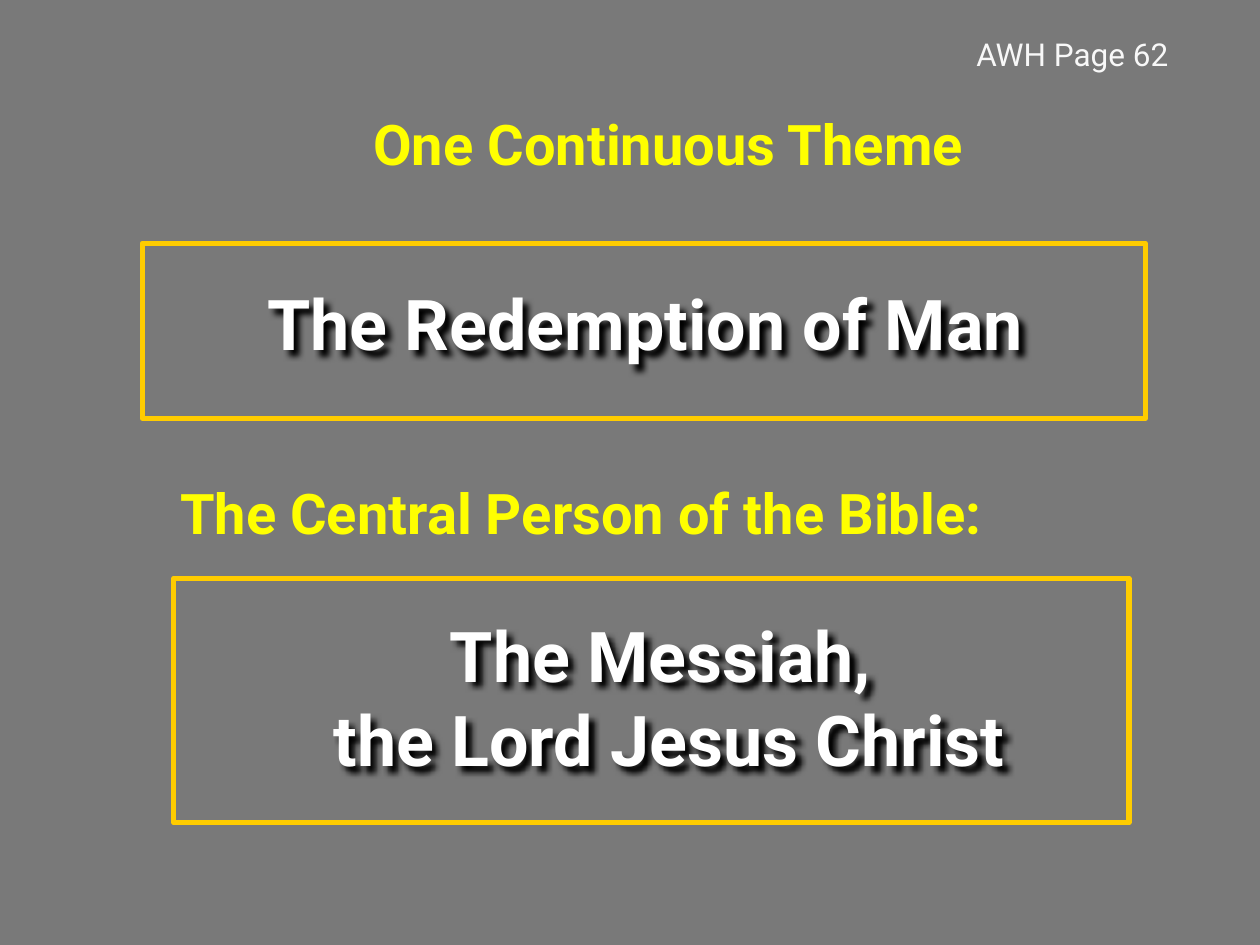
import pptx
import pptx.util
import pptx.dml.color
import pptx.enum.shapes
import pptx.enum.text
import pptx.oxml
import pptx.oxml.ns

Inches, Pt = pptx.util.Inches, pptx.util.Pt
FONT, GREY, GOLD = "Roboto", "797979", "FFCC00"
YELLOW, WHITE, PALE = "FFFF00", "FFFFFF", "F8F8F8"

# text, text place, frame place
FRAMED = [
    ("The Redemption of Man", (1.71, 2.05, 6.82, 0.91), (1.13, 1.93, 7.96, 1.39)),
    ("The Messiah, \vthe Lord Jesus Christ", (1.99, 4.68, 6.64, 1.57),
     (1.38, 4.59, 7.58, 1.94)),
]
# text, place, size, colour, bold, centred, wrapped, margins (side, top)
LABELS = [
    ("One Continuous Theme", (1.3, 0.82, 8.01, 0.64), 32, YELLOW, True, True, True, (0.05, 0.05)),
    ("The Central Person of the Bible:", (1.38, 3.75, 7.2, 0.64), 32, YELLOW, True, False, False,
     (0.05, 0.05)),
    ("AWH Page 62", (7.65, 0.23, 1.96, 0.4), 18, PALE, False, False, True, (0.1, 0.05)),
]
SHADOW = (
    '<a:effectLst xmlns:a="http://schemas.openxmlformats.org/drawingml/2006/main">'
    '<a:outerShdw blurRad="38100" dist="50800" dir="2700000" algn="tl">'
    '<a:srgbClr val="000000"/></a:outerShdw></a:effectLst>'
)


def rgb(code):
    return pptx.dml.color.RGBColor.from_string(code)


def label(shapes, text, place, size, color, bold, center, wrap, margins):
    box = shapes.add_textbox(*map(Inches, place))
    frame = box.text_frame
    frame.word_wrap = wrap
    side, top = margins
    frame.margin_left = frame.margin_right = Inches(side)
    frame.margin_top, frame.margin_bottom = Inches(top), Inches(0.05)
    frame.text = text
    for para in frame.paragraphs:
        align = pptx.enum.text.PP_ALIGN
        para.alignment = align.CENTER if center else align.LEFT
        for run in para.runs:
            font = run.font
            font.name, font.size, font.bold = FONT, Pt(size), bold
            font.color.rgb = rgb(color)
    return box


def border(shapes, place):
    rect = shapes.add_shape(pptx.enum.shapes.MSO_SHAPE.RECTANGLE, *map(Inches, place))
    rect.shadow.inherit = False
    rect.fill.background()
    rect.line.color.rgb = rgb(GOLD)
    rect.line.width = Pt(3)


def main():
    deck = pptx.Presentation()
    deck.slide_width, deck.slide_height = Inches(10), Inches(7.5)
    slide = deck.slides.add_slide(deck.slide_layouts[6])
    slide.background.fill.solid()
    slide.background.fill.fore_color.rgb = rgb(GREY)

    for text, place, edge in FRAMED:
        group = slide.shapes.add_group_shape()
        box = label(group.shapes, text, place, 40, WHITE, True, True, True, (0.05, 0.18))
        props = box.element.find(pptx.oxml.ns.qn("p:spPr"))
        props.append(pptx.oxml.parse_xml(SHADOW))
        border(group.shapes, edge)
    for item in LABELS:
        label(slide.shapes, *item)
    deck.save("out.pptx")


if __name__ == "__main__":
    main()
